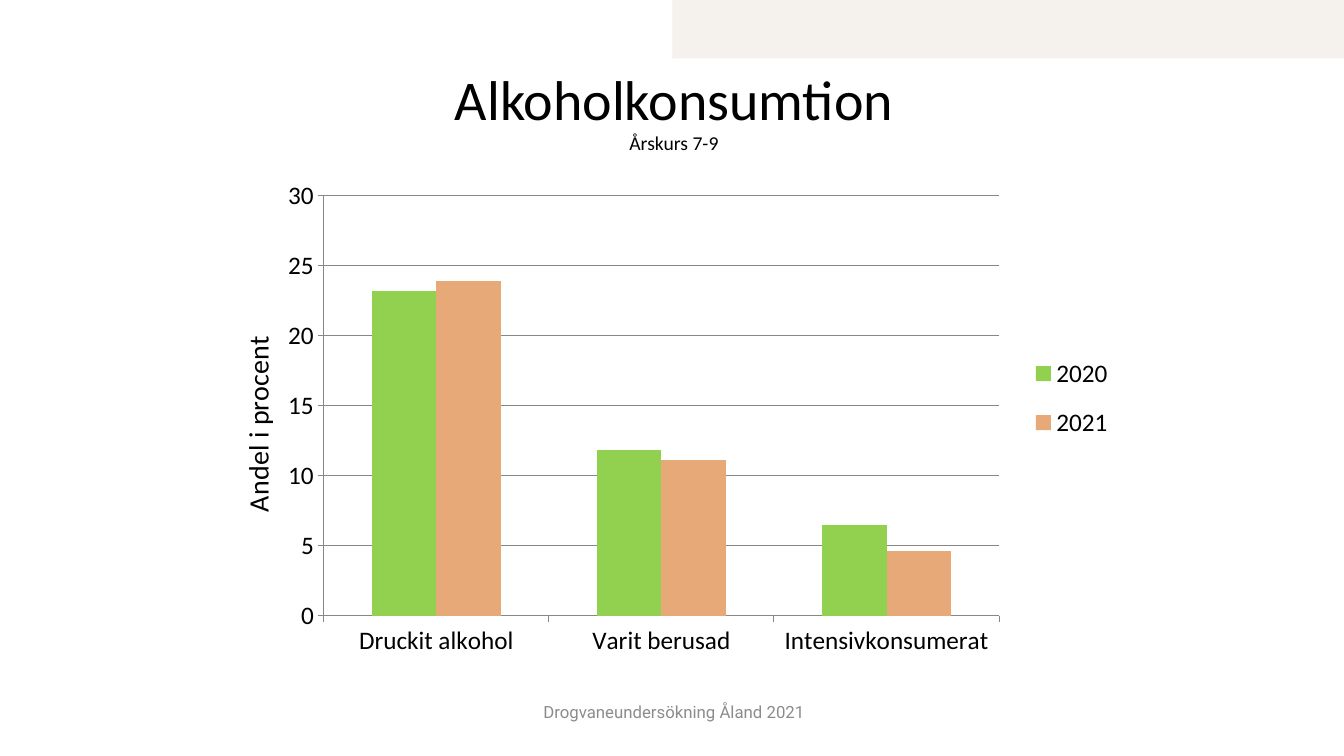
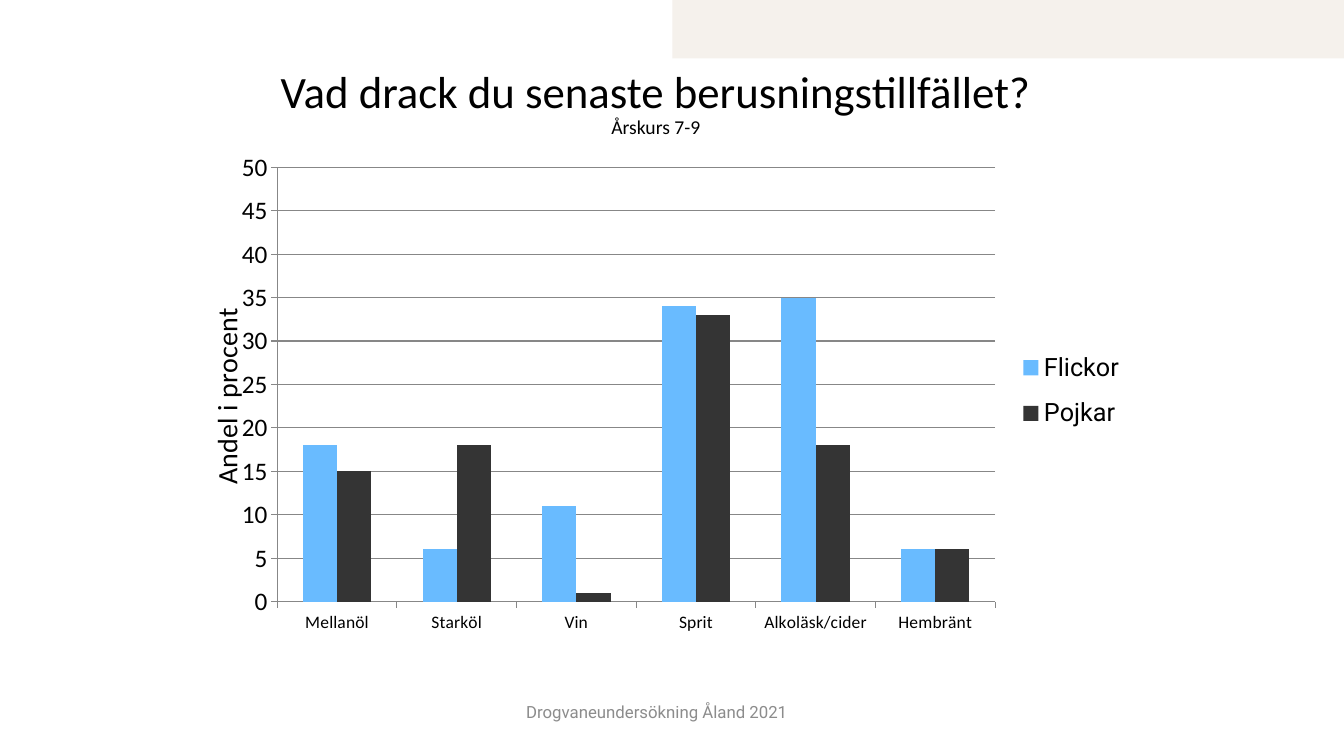
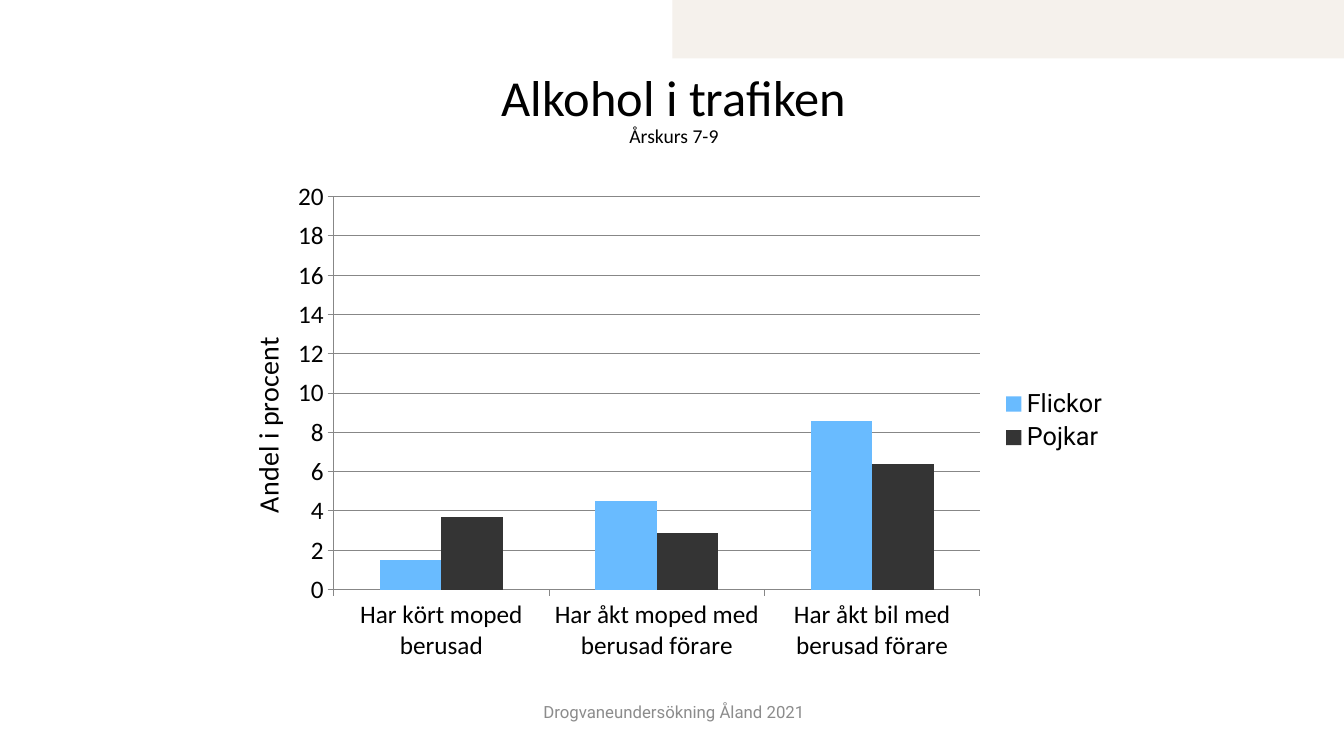
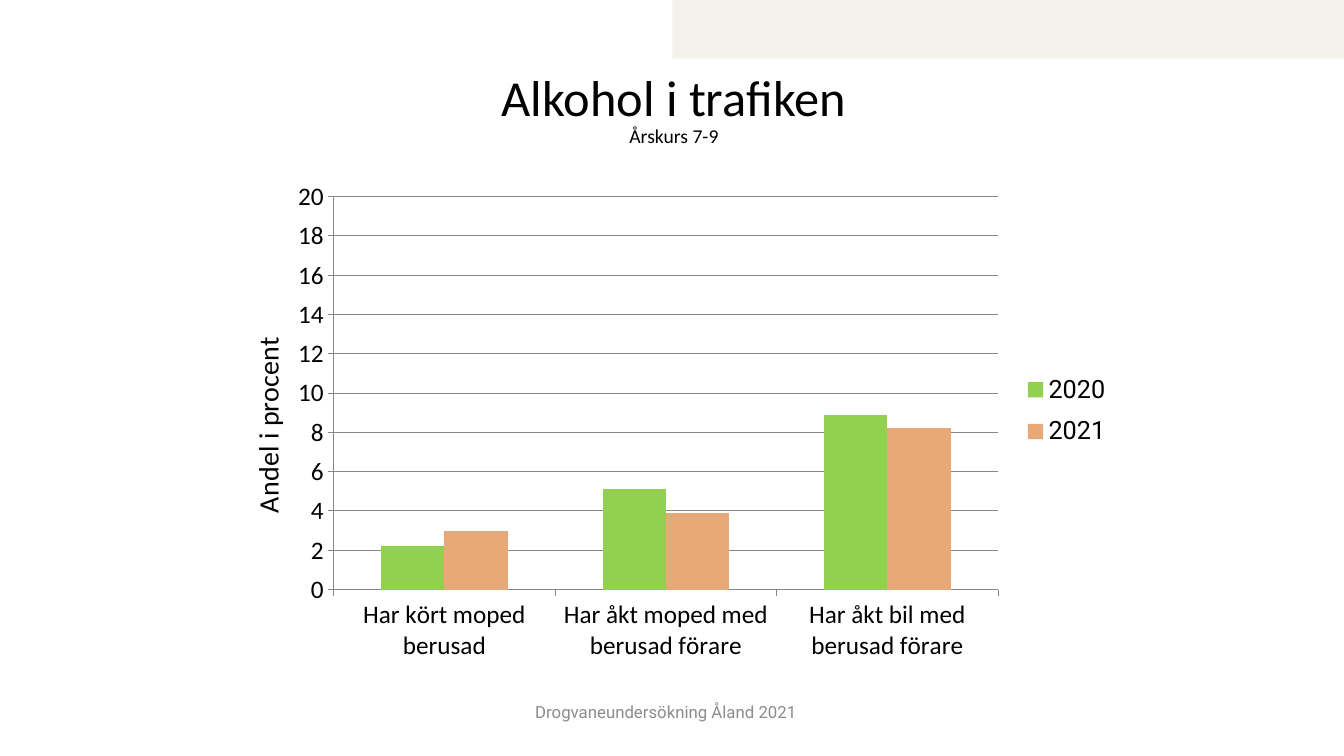
from lxml.etree import SubElement
from pptx import Presentation
from pptx.chart.data import CategoryChartData
from pptx.dml.color import RGBColor
from pptx.enum.chart import XL_CHART_TYPE as ChartType, XL_LEGEND_POSITION as LegendPosition
from pptx.enum.chart import XL_TICK_MARK as TickMark
from pptx.enum.shapes import MSO_SHAPE as Preset
from pptx.enum.text import MSO_ANCHOR as Anchor, MSO_AUTO_SIZE as AutoSize, PP_ALIGN as Align
from pptx.oxml.ns import qn
from pptx.util import Pt

PX = 9144
BLACK = RGBColor(0x00, 0x00, 0x00)
SAND = RGBColor(0xF5, 0xF1, 0xEC)
GREY = RGBColor(0x8C, 0x8C, 0x8C)
RULE = RGBColor(0x87, 0x87, 0x87)
GREEN = RGBColor(0x92, 0xD0, 0x50)
ORANGE = RGBColor(0xE7, 0xA9, 0x77)
BLUE = RGBColor(0x69, 0xBB, 0xFF)
CHARCOAL = RGBColor(0x34, 0x34, 0x34)
HEAD_FONT = "Calibri"
BODY_FONT = "Roboto"

YEARS = {"2020": GREEN, "2021": ORANGE}
GENDERS = {"Flickor": BLUE, "Pojkar": CHARCOAL}
TRAFFIC = ["Har kört moped berusad", "Har åkt moped med berusad förare", "Har åkt bil med berusad förare"]
TITLE_FRAME = (118, 72, 1101, 114)
TRAFFIC_FRAME = (210, 170, 900, 495)


def emu(*lengths):
    return [length * PX for length in lengths]


def style(font, size, name=HEAD_FONT, color=BLACK):
    font.size, font.name, font.bold = Pt(size), name, False
    font.color.rgb = color


def place(element, index, chart_frame, frame, inner=False):
    for old in element.findall(qn("c:layout")):
        element.remove(old)
    layout = SubElement(element, qn("c:layout"))
    element.insert(index, layout)
    manual = SubElement(layout, qn("c:manualLayout"))
    settings = [("layoutTarget", "inner")] if inner else []
    settings += [("xMode", "edge"), ("yMode", "edge")]
    left, top, width, height = chart_frame
    origin, extent = (left, top, 0, 0), (width, height, width, height)
    for key, value, start, whole in zip("xywh", frame, origin, extent):
        settings.append((key, str(round((value - start) / whole, 4))))
    for key, value in settings:
        SubElement(manual, qn("c:" + key)).set("val", value)


class Report:
    def __init__(self):
        self.deck = Presentation()
        self.deck.slide_width, self.deck.slide_height = emu(1333, 750)
        self.page = None

    def add_page(self, heading, size, frame=TITLE_FRAME, footer_left=510):
        self.page = self.deck.slides.add_slide(self.deck.slide_layouts[5])
        self.band()
        self.title(heading, size, frame)
        self.footer(footer_left)

    def band(self):
        band = self.page.shapes.add_shape(Preset.RECTANGLE, *emu(667, 0, 666, 58))
        band.shadow.inherit = False
        band.fill.solid()
        band.fill.fore_color.rgb = SAND
        band.line.fill.background()

    def title(self, heading, size, frame):
        box = self.page.shapes.title
        box.left, box.top, box.width, box.height = emu(*frame)
        text = box.text_frame
        text.margin_left = text.margin_top = text.margin_right = text.margin_bottom = 0
        text.word_wrap, text.auto_size = True, AutoSize.NONE
        text.vertical_anchor = Anchor.TOP
        para = text.paragraphs[0]
        para.alignment, para.line_spacing = Align.CENTER, 0.9
        style(para.font, size)
        span = para.add_run()
        span.text, span.font.size = heading, Pt(size)
        para.add_line_break()
        span = para.add_run()
        span.text, span.font.size = "Årskurs 7-9", Pt(14)

    def footer(self, left):
        box = self.page.shapes.add_textbox(*emu(left, 686, 317, 40))
        text = box.text_frame
        text.word_wrap, text.vertical_anchor = True, Anchor.MIDDLE
        para = text.paragraphs[0]
        para.text, para.alignment = "Drogvaneundersökning Åland 2021", Align.CENTER
        style(para.font, 12, BODY_FONT, GREY)

    def chart(self, frame, categories, colors, values, top_value, step, plot, label, legend,
              category_size=18, legend_font=BODY_FONT):
        data = CategoryChartData()
        data.categories = categories
        for name, row in zip(colors, values):
            data.add_series(name, row)
        chart = self.page.shapes.add_chart(ChartType.COLUMN_CLUSTERED, *emu(*frame), data).chart
        chart.has_title = False
        style(chart.font, 18, BODY_FONT)
        bars = chart.plots[0]
        bars.gap_width, bars.vary_by_categories = 150, False
        for series, color in zip(bars.series, colors.values()):
            series.format.fill.solid()
            series.format.fill.fore_color.rgb = color
        self.axes(chart, top_value, step, category_size)
        chart.has_legend = True
        chart.legend.position = LegendPosition.RIGHT
        chart.legend.include_in_layout = False
        style(chart.legend.font, 18, legend_font)
        root = chart.element
        place(root.xpath(".//c:plotArea")[0], 0, frame, plot, inner=True)
        place(root.xpath(".//c:valAx/c:title")[0], 1, frame, label)
        place(root.xpath(".//c:legend")[0], 1, frame, legend)

    def axes(self, chart, top_value, step, category_size):
        values = chart.value_axis
        for axis, size in ((chart.category_axis, category_size), (values, 18)):
            style(axis.tick_labels.font, size)
            axis.major_tick_mark, axis.minor_tick_mark = TickMark.OUTSIDE, TickMark.NONE
            self.rule(axis.format.line)
        values.minimum_scale, values.maximum_scale, values.major_unit = 0, top_value, step
        values.has_major_gridlines = True
        self.rule(values.major_gridlines.format.line)
        para = values.axis_title.text_frame.paragraphs[0]
        para.text = "Andel i procent"
        style(para.font, 20)
        body = chart.element.xpath(".//c:valAx/c:title//a:bodyPr")[0]
        body.set("rot", "-5400000")
        body.set("vert", "horz")

    def rule(self, line):
        line.color.rgb, line.width = RULE, Pt(0.75)


def main():
    report = Report()

    report.add_page("Alkoholkonsumtion", 40)
    report.chart((217, 175, 900, 495), ["Druckit alkohol", "Varit berusad", "Intensivkonsumerat"],
                 YEARS, [(23.2, 11.8, 6.5), (23.9, 11.1, 4.6)], 30, 5,
                 plot=(321, 194, 670, 417), label=(231, 328), legend=(1021, 337, 84, 116),
                 legend_font=HEAD_FONT)

    report.add_page("Vad drack du senaste berusningstillfället?", 32, (194, 69, 913, 102), 493)
    report.chart((186, 139, 953, 520),
                 ["Mellanöl", "Starköl", "Vin", "Sprit", "Alkoläsk/cider", "Hembränt"],
                 GENDERS, [(18, 6, 11, 34, 35, 6), (15, 18, 1, 33, 18, 6)], 50, 5,
                 plot=(275, 166, 712, 431), label=(200, 301), legend=(1008, 334, 109, 107),
                 category_size=12.5)

    report.add_page("Alkohol i trafiken", 36)
    report.chart(TRAFFIC_FRAME, TRAFFIC, GENDERS, [(1.5, 4.5, 8.6), (3.7, 2.9, 6.4)], 20, 2,
                 plot=(331, 195, 641, 390), label=(241, 329), legend=(991, 382, 109, 71))

    report.add_page("Alkohol i trafiken", 36, footer_left=502)
    report.chart(TRAFFIC_FRAME, TRAFFIC, YEARS, [(2.2, 5.1, 8.9), (3, 3.9, 8.2)], 20, 2,
                 plot=(331, 195, 659, 390), label=(241, 329), legend=(1013, 360, 90, 95))

    report.deck.save("out.pptx")


if __name__ == "__main__":
    main()
